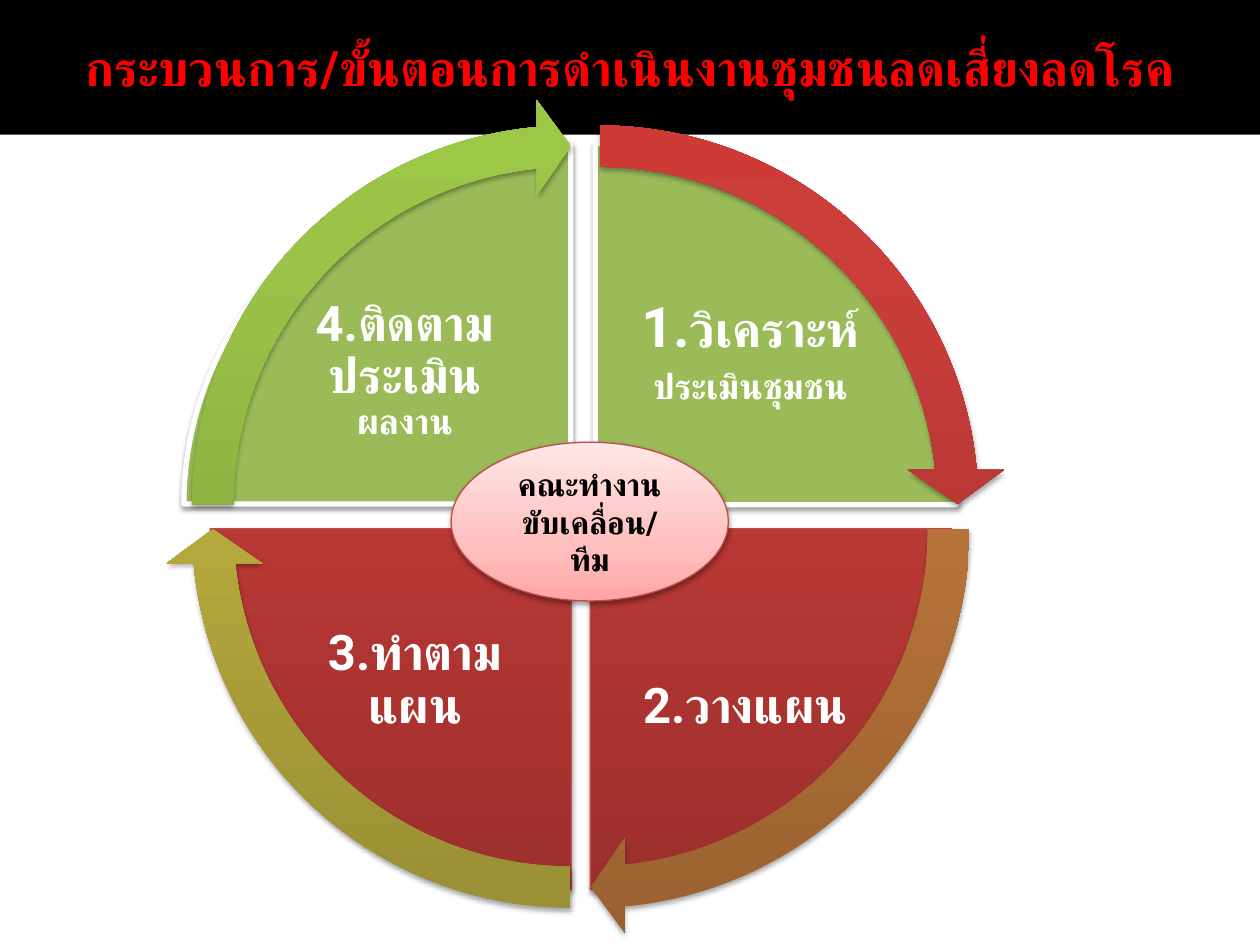
from lxml import etree
from pptx import Presentation
from pptx.dml.color import RGBColor
from pptx.enum.shapes import MSO_SHAPE
from pptx.enum.text import MSO_ANCHOR, PP_ALIGN
from pptx.oxml.ns import qn
from pptx.util import Pt

PIE = MSO_SHAPE.PIE
CIRCULAR_ARROW = MSO_SHAPE.CIRCULAR_ARROW
OVAL = MSO_SHAPE.OVAL
CENTER = PP_ALIGN.CENTER
TOP, MIDDLE, BOTTOM = MSO_ANCHOR.TOP, MSO_ANCHOR.MIDDLE, MSO_ANCHOR.BOTTOM

FONT = "Roboto"
BLACK = RGBColor(0x00, 0x00, 0x00)
WHITE = RGBColor(0xFF, 0xFF, 0xFF)
TITLE_RED = RGBColor(0xFF, 0x00, 0x00)
LEAF = RGBColor(0x9B, 0xBB, 0x59)
EDGE_RED = RGBColor(0xBF, 0x4C, 0x48)


def ramp(middle, *colors):
    return [(position, RGBColor.from_string(color))
            for position, color in zip((0, middle, 100), colors)]


RED = ramp(80, "9C2F2D", "CB3E3A", "CE3B37")
BROWN = ramp(80, "9A6130", "C87E3F", "CC7E3C")
OLIVE = ramp(80, "988E34", "C6B843", "C9BB41")
GREEN = ramp(80, "779737", "9BC348", "9DC746")
PINK = ramp(35, "FFA6A5", "FFC0BF", "FFE7E7")

ARROW_SIZE = 463.7
QUARTER = 54


def write_text(shape, paragraphs, color=WHITE, anchor=MIDDLE, inset=None,
               line_spacing=None, space_after=0):
    frame = shape.text_frame
    frame.word_wrap = True
    frame.vertical_anchor = anchor
    if inset is not None:
        frame.margin_left = frame.margin_right = Pt(inset)
        frame.margin_top = frame.margin_bottom = Pt(inset)
    for index, runs in enumerate(paragraphs):
        paragraph = frame.add_paragraph() if index else frame.paragraphs[0]
        paragraph.alignment = CENTER
        paragraph.line_spacing = line_spacing
        paragraph.space_after = Pt(space_after)
        for text, size in runs:
            run = paragraph.add_run()
            run.text = text
            run.font.name = FONT
            run.font.size = Pt(size)
            run.font.bold = True
            run.font.color.rgb = color


def set_gradient(shape, stops):
    shape.fill.gradient()
    shape.fill.gradient_angle = 90
    stop_list = shape.fill._xPr.find(qn("a:gradFill")).find(qn("a:gsLst"))
    for stop in list(stop_list):
        stop_list.remove(stop)
    for position, color in stops:
        stop = etree.SubElement(stop_list, qn("a:gs"), pos=str(position * 1000))
        etree.SubElement(stop, qn("a:srgbClr"), val=str(color))


def set_shadow(shape, opacity, distance):
    shape.shadow.inherit = False
    effects = shape.fill._xPr.find(qn("a:effectLst"))
    shadow = etree.SubElement(
        effects, qn("a:outerShdw"), blurRad=str(Pt(3.1)),
        dist=str(Pt(distance)), dir="5400000", rotWithShape="0")
    color = etree.SubElement(shadow, qn("a:srgbClr"), val="000000")
    etree.SubElement(color, qn("a:alpha"), val=str(opacity * 1000))


def add_figure(slide, kind, box, fill, edge=None, angles=(), shadow=(35, 1.8)):
    shape = slide.shapes.add_shape(kind, *map(Pt, box))
    for index, value in enumerate(angles):
        shape.adjustments[index] = value
    if isinstance(fill, list):
        set_gradient(shape, fill)
    else:
        shape.fill.solid()
        shape.fill.fore_color.rgb = fill
    if edge:
        shape.line.color.rgb, shape.line.width = edge[0], Pt(edge[1])
    else:
        shape.line.fill.background()
    set_shadow(shape, *shadow)
    return shape


def add_green_quarter(slide, box, start, end):
    add_figure(slide, PIE, box, LEAF, (WHITE, 3), (start, end), (38, 1.6))


def add_red_quarter(slide, box, start, end):
    add_figure(slide, PIE, box, RED, (EDGE_RED, 0.75), (start, end))


def add_step_label(slide, box, paragraphs, anchor, space_after=0):
    label = slide.shapes.add_textbox(*map(Pt, box))
    write_text(label, paragraphs, anchor=anchor, inset=2.9, line_spacing=0.9,
               space_after=space_after)


def add_cycle_arrow(slide, left, top, start, fill):
    angles = (0.051, 3.275, start + QUARTER - 3.275, start, 0.059)
    add_figure(slide, CIRCULAR_ARROW, (left, top, ARROW_SIZE, ARROW_SIZE),
               fill, angles=angles)


def add_title(slide):
    title = slide.shapes.title
    title.left, title.top, title.width, title.height = map(Pt, (0, 0, 720, 77))
    title.fill.solid()
    title.fill.fore_color.rgb = BLACK
    write_text(title, [[("กระบวนการ/ขั้นตอนการดำเนินงานชุมชนลดเสี่ยงลดโรค", 28)]],
               color=TITLE_RED)


def main():
    deck = Presentation()
    deck.slide_width, deck.slide_height = Pt(720), Pt(540)
    slide = deck.slides.add_slide(deck.slide_layouts[5])
    add_title(slide)

    add_green_quarter(slide, (133.9, 82.1, 412.6, 412.6), 162, 0)
    add_step_label(slide, (352.8, 167.8, 151.9, 113),
                   [[("1.", 32), ("วิเคราะห์", 28)], [("ประเมินชุมชน", 20)]],
                   TOP, space_after=6)
    add_red_quarter(slide, (131, 95.8, 412.6, 412.6), 0, 54)
    add_step_label(slide, (349.9, 309.6, 151.9, 113),
                   [[("2.วางแผน", 28)]], BOTTOM)
    add_red_quarter(slide, (120.2, 95.8, 412.6, 412.6), 54, 108)
    add_step_label(slide, (161.3, 309.6, 151.9, 113),
                   [[("3.ทำตามแผน", 28)]], BOTTOM)
    add_green_quarter(slide, (105.1, 82.8, 442.1, 410.4), 108, 162)
    add_step_label(slide, (149.8, 167.8, 163.4, 112.3),
                   [[("4.ติดตามประเมิน", 28)], [("ผลงาน", 20)]], TOP)

    add_cycle_arrow(slide, 110.9, 56.2, 162, RED)
    add_cycle_arrow(slide, 105.8, 70.6, 0, BROWN)
    add_cycle_arrow(slide, 94.3, 70.6, 54, OLIVE)
    add_cycle_arrow(slide, 94.3, 56.2, 108, GREEN)

    team = add_figure(slide, OVAL, (257.8, 252.7, 158.4, 90.7), PINK,
                      (EDGE_RED, 0.75), shadow=(38, 1.6))
    write_text(team, [[("คณะทำงานขับเคลื่อน/ทีม", 18)]], color=BLACK)
    deck.save("out.pptx")


if __name__ == "__main__":
    main()
